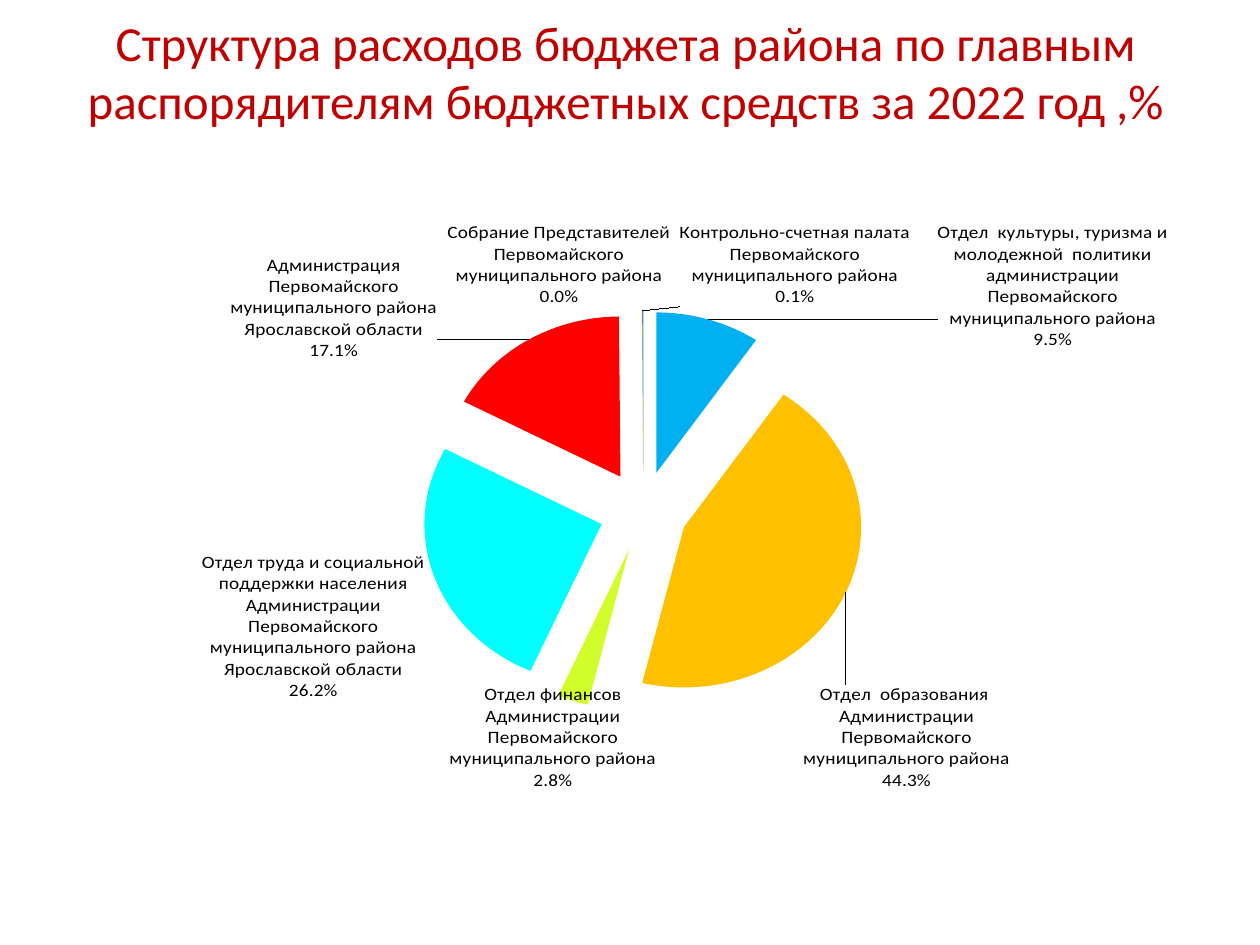
from dataclasses import dataclass

from lxml.etree import SubElement
from pptx import Presentation
from pptx.chart.data import CategoryChartData
from pptx.dml.color import RGBColor
from pptx.enum.chart import XL_CHART_TYPE as ChartType, XL_LABEL_POSITION as LabelPosition
from pptx.enum.text import MSO_ANCHOR as Anchor, MSO_AUTO_SIZE as AutoSize, PP_ALIGN as Align
from pptx.oxml import parse_xml
from pptx.oxml.ns import nsdecls, qn
from pptx.util import Pt

EMU_PER_PX = 914400 // 126
LABEL_EXT = "{CE6537A1-D6FC-4f65-9D91-7224C49458BB}"
C15 = "http://schemas.microsoft.com/office/drawing/2012/chart"


@dataclass(frozen=True)
class Theme:
    font: str = "Calibri"
    title_color: str = "C00000"
    text_color: str = "000000"
    title_size: int = 28
    chart_size: int = 10
    label_size: int = 11


@dataclass(frozen=True)
class Department:
    name: str
    share: float
    color: str
    label_shift: tuple
    label_size: tuple


DISTRICT = "Первомайского муниципального района"
DEPARTMENTS = [
    Department(f"Отдел  культуры, туризма и молодежной  политики администрации {DISTRICT}",
               0.095, "00B0F0", (227, 40), (236, 128)),
    Department(f"Отдел  образования  Администрации {DISTRICT}",
               0.443, "FFC000", (-50, 99), (212, 106)),
    Department(f"Отдел финансов Администрации {DISTRICT}",
               0.028, "D1FE2A", (86, -23), (212, 106)),
    Department(f"Отдел труда и социальной поддержки населения Администрации {DISTRICT} Ярославской области",
               0.262, "00FFFF", (-2, -30), (228, 150)),
    Department(f"Администрация {DISTRICT} Ярославской области",
               0.171, "FF0000", (-87, 30), (212, 106)),
    Department(f"Собрание Представителей {DISTRICT}",
               0.0004, "FFFF00", (-83, 3), (229, 85)),
    Department(f"Контрольно-счетная палата {DISTRICT}",
               0.001, "4F81BD", (152, 3), (237, 85)),
]


class BudgetSlide:
    def __init__(self, deck, theme):
        self.theme = theme
        self.slide = deck.slides.add_slide(deck.slide_layouts[5])

    def box(self, *lengths):
        return [length * EMU_PER_PX for length in lengths]

    def style_font(self, font, size, color):
        font.name = self.theme.font
        font.size = Pt(size)
        font.color.rgb = RGBColor.from_string(color)

    def title(self, text, *place):
        heading = self.slide.shapes.title
        heading.left, heading.top, heading.width, heading.height = self.box(*place)
        frame = heading.text_frame
        frame.text = text
        frame.word_wrap = True
        frame.auto_size = AutoSize.NONE
        frame.vertical_anchor = Anchor.MIDDLE
        line = frame.paragraphs[0]
        line.alignment = Align.CENTER
        self.style_font(line.runs[0].font, self.theme.title_size, self.theme.title_color)

    def pie(self, departments, *place):
        data = CategoryChartData(number_format="0.0%")
        data.categories = [department.name for department in departments]
        data.add_series("Series 1", [department.share for department in departments])
        chart = self.slide.shapes.add_chart(ChartType.PIE, *self.box(*place), data).chart
        chart.has_legend = False
        chart.has_title = False
        self.style_font(chart.font, self.theme.chart_size, self.theme.text_color)
        width, height = place[2:]
        self.set_plot_area(chart, x=181 / width, y=98 / height, w=855 / width, h=443 / height)

        chart.plots[0].vary_by_categories = True
        shares = chart.plots[0].series[0]
        for index, department in enumerate(departments):
            fill = shares.points[index].format.fill
            fill.solid()
            fill.fore_color.rgb = RGBColor.from_string(department.color)
        explosion = parse_xml(f'<c:explosion {nsdecls("c")} val="25"/>')
        shares._element.find(qn("c:dPt")).addprevious(explosion)
        self.label_slices(shares, departments, width, height)

    def set_plot_area(self, chart, **fractions):
        area = chart.element.find(f'.//{qn("c:plotArea")}')
        for old in area.findall(qn("c:layout")):
            area.remove(old)
        layout = parse_xml(f'<c:layout {nsdecls("c")}/>')
        manual = SubElement(layout, qn("c:manualLayout"))
        settings = {"layoutTarget": "inner", "xMode": "edge", "yMode": "edge", **fractions}
        for tag, value in settings.items():
            SubElement(manual, qn(f"c:{tag}")).set("val", str(value))
        area.insert(0, layout)

    def label_slices(self, shares, departments, chart_width, chart_height):
        labels = shares.data_labels
        labels.show_value = True
        labels.show_category_name = True
        labels.show_percentage = False
        labels.number_format = "0.0%"
        labels.number_format_is_linked = False
        labels.position = LabelPosition.OUTSIDE_END
        self.style_font(labels.font, self.theme.label_size, self.theme.text_color)
        block = labels._element
        for leader in block.findall(qn("c:showLeaderLines")):
            block.remove(leader)
        bubble = block.find(qn("c:showBubbleSize"))
        bubble.addnext(parse_xml(f'<c:showLeaderLines {nsdecls("c")} val="1"/>'))
        bubble.addnext(parse_xml(f'<c:separator {nsdecls("c")}>\n</c:separator>'))
        for index, department in enumerate(departments):
            x, y = department.label_shift
            w, h = department.label_size
            label = parse_xml(
                f'<c:dLbl {nsdecls("c")}><c:idx val="{index}"/>'
                f'<c:layout><c:manualLayout><c:x val="{x / chart_width:.3f}"/>'
                f'<c:y val="{y / chart_height:.3f}"/></c:manualLayout></c:layout>'
                '<c:dLblPos val="outEnd"/><c:showLegendKey val="0"/><c:showVal val="1"/>'
                '<c:showCatName val="1"/><c:showSerName val="0"/><c:showPercent val="0"/>'
                '<c:showBubbleSize val="0"/><c:separator>\n</c:separator>'
                f'<c:extLst><c:ext uri="{LABEL_EXT}" xmlns:c15="{C15}"><c15:layout>'
                f'<c:manualLayout><c:w val="{w / chart_width:.3f}"/>'
                f'<c:h val="{h / chart_height:.3f}"/></c:manualLayout>'
                '</c15:layout></c:ext></c:extLst></c:dLbl>'
            )
            block.insert(index, label)
            font = shares.points[index].data_label.font
            self.style_font(font, self.theme.label_size, self.theme.text_color)


def main():
    deck = Presentation()
    deck.slide_width, deck.slide_height = 1260 * EMU_PER_PX, 945 * EMU_PER_PX
    page = BudgetSlide(deck, Theme())
    page.title("Структура расходов бюджета района по главным распорядителям бюджетных средств за 2022 год ,%",
               25, 16, 1201, 110)
    page.pie(DEPARTMENTS, 35, 185, 1181, 629)
    deck.save("out.pptx")


if __name__ == "__main__":
    main()
